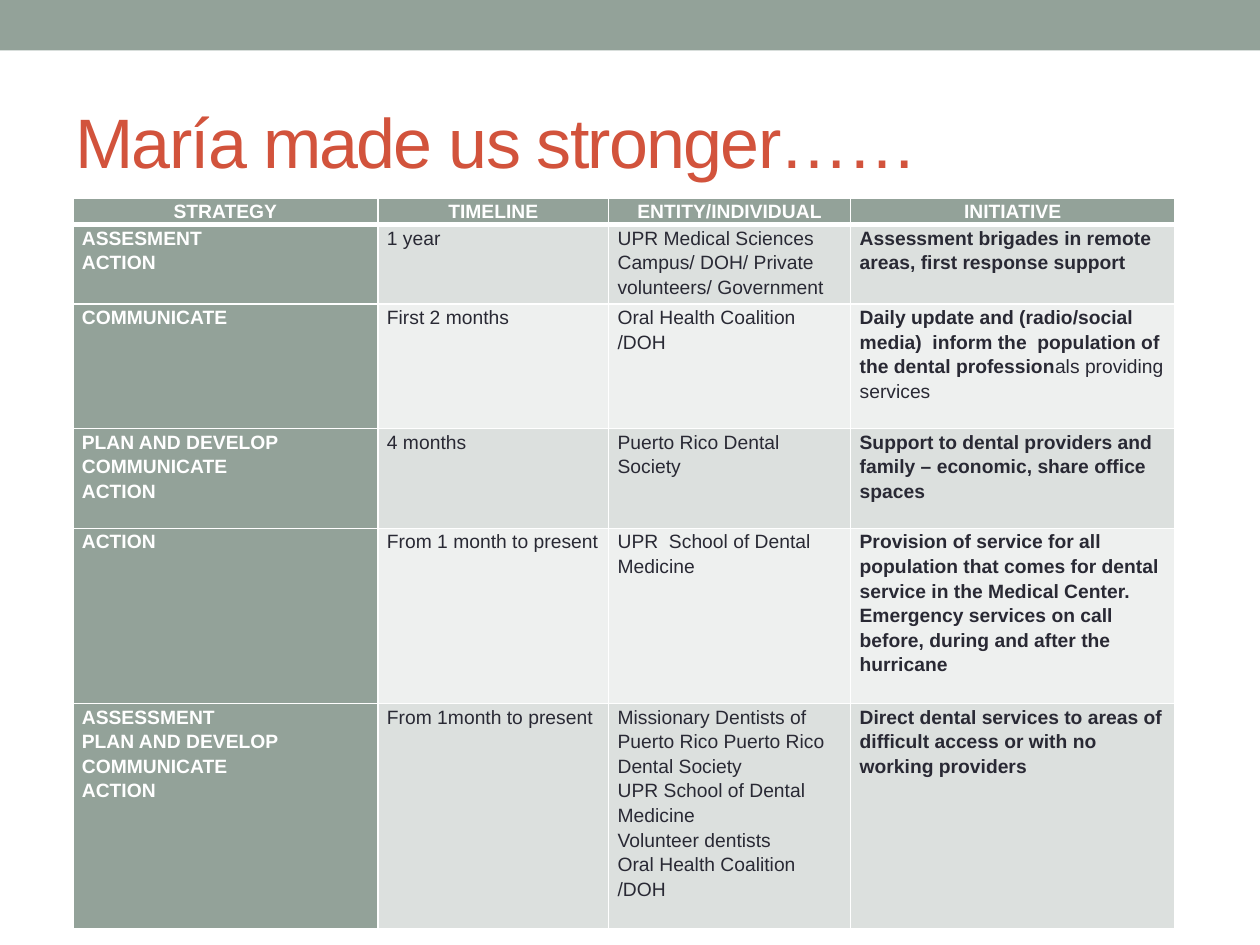
import pptx
import pptx.dml.color
import pptx.enum.shapes
import pptx.enum.text
import pptx.oxml
import pptx.oxml.ns
import pptx.util

Cm = pptx.util.Cm
Pt = pptx.util.Pt
RGBColor = pptx.dml.color.RGBColor
Align = pptx.enum.text.PP_ALIGN

SAGE = RGBColor(0x93, 0xA2, 0x99)
RUST = RGBColor(0xD2, 0x53, 0x3C)
INK = RGBColor(0x29, 0x29, 0x34)
WHITE = RGBColor(0xFF, 0xFF, 0xFF)
BAND_DARK = RGBColor(0xDC, 0xE0, 0xDE)
BAND_LIGHT = RGBColor(0xEE, 0xF0, 0xEF)

COLUMN_WIDTHS = [6.15, 4.65, 4.88, 6.53]
ROW_HEIGHTS = [0.51, 1.52, 2.51, 2.01, 3.53, 4.55]

HEADERS = ["STRATEGY", "TIMELINE", "ENTITY/INDIVIDUAL", "INITIATIVE"]
STRATEGIES = [
    (["ASSESMENT", "ACTION"], "1 year",
     ["UPR Medical Sciences Campus/ DOH/ Private volunteers/ Government"],
     "Assessment brigades in remote areas, first response support", ""),
    (["COMMUNICATE"], "First 2 months", ["Oral Health Coalition /DOH"],
     "Daily update and (radio/social media)  inform the  population of the dental profession",
     "als providing services"),
    (["PLAN AND DEVELOP", "COMMUNICATE", "ACTION"], "4 months",
     ["Puerto Rico Dental Society"],
     "Support to dental providers and family – economic, share office spaces", ""),
    (["ACTION"], "From 1 month to present", ["UPR  School of Dental Medicine"],
     "Provision of service for all population that comes for dental service in the "
     "Medical Center.  Emergency services on call before, during and after the hurricane", ""),
    (["ASSESSMENT", "PLAN AND DEVELOP", "COMMUNICATE", "ACTION"], "From 1month to present",
     ["Missionary Dentists of  Puerto Rico Puerto Rico Dental Society",
      "UPR School of Dental Medicine", "Volunteer dentists", "Oral Health Coalition /DOH"],
     "Direct dental services to areas of difficult access or with no working providers", ""),
]


class SlideBuilder:
    font_name = "Arial"
    table_size = 11
    line_spacing = 1.15

    def __init__(self, slide):
        self.slide = slide

    def add_run(self, paragraph, text, size, color, bold=False):
        run = paragraph.add_run()
        run.text = text
        run.font.name = self.font_name
        run.font.size = Pt(size)
        run.font.bold = bold
        run.font.color.rgb = color
        return run

    def add_bar(self, left, top, width, height, color):
        shape = self.slide.shapes.add_shape(
            pptx.enum.shapes.MSO_SHAPE.RECTANGLE, Cm(left), Cm(top), Cm(width), Cm(height))
        shape.shadow.inherit = False
        shape.fill.solid()
        shape.fill.fore_color.rgb = color
        shape.line.fill.background()

    def add_title(self, left, top, width, height, text):
        shape = self.slide.shapes.add_textbox(Cm(left), Cm(top), Cm(width), Cm(height))
        frame = shape.text_frame
        frame.word_wrap = True
        frame.vertical_anchor = pptx.enum.text.MSO_ANCHOR.MIDDLE
        run = self.add_run(frame.paragraphs[0], text, 40, RUST)
        run.font._element.set("spc", "-100")

    def add_table(self, left, top, widths, heights):
        frame = self.slide.shapes.add_table(
            len(heights), len(widths), Cm(left), Cm(top), Cm(sum(widths)), Cm(sum(heights)))
        table = frame.table
        for column, width in zip(table.columns, widths):
            column.width = Cm(width)
        for row, height in zip(table.rows, heights):
            row.height = Cm(height)
        return table

    def set_borders(self, cell, top, bottom):
        properties = cell._tc.get_or_add_tcPr()
        sides = [("lnL", 1), ("lnR", 1), ("lnT", top), ("lnB", bottom)]
        for index, (side, width) in enumerate(sides):
            border = pptx.oxml.parse_xml(
                f'<a:{side} {pptx.oxml.ns.nsdecls("a")} w="{Pt(width)}">'
                f'<a:solidFill><a:srgbClr val="{WHITE}"/></a:solidFill></a:{side}>')
            properties.insert(index, border)

    def fill_cell(self, cell, paragraphs, fill, color, align=Align.LEFT, top=1, bottom=1):
        cell.margin_left = cell.margin_right = Cm(0.18)
        cell.margin_top = cell.margin_bottom = 0
        cell.fill.solid()
        cell.fill.fore_color.rgb = fill
        self.set_borders(cell, top, bottom)
        for index, runs in enumerate(paragraphs):
            frame = cell.text_frame
            paragraph = frame.add_paragraph() if index else frame.paragraphs[0]
            paragraph.alignment = align
            paragraph.line_spacing = self.line_spacing
            for text, bold in runs:
                self.add_run(paragraph, text, self.table_size, color, bold)


def main():
    presentation = pptx.Presentation()
    presentation.slide_width = Cm(25.4)
    presentation.slide_height = Cm(19.05)
    builder = SlideBuilder(presentation.slides.add_slide(presentation.slide_layouts[6]))

    builder.add_bar(0, 0, 25.4, 1.02, SAGE)
    builder.add_title(1.27, 1.47, 22.86, 2.74, "María made us stronger……")
    table = builder.add_table(1.47, 3.99, COLUMN_WIDTHS, ROW_HEIGHTS)

    for column, header in enumerate(HEADERS):
        builder.fill_cell(table.cell(0, column), [[(header, True)]], SAGE, WHITE,
                          Align.CENTER, bottom=3)

    for row, (strategy, timeline, entities, initiative, ending) in enumerate(STRATEGIES, 1):
        band = BAND_DARK if row % 2 else BAND_LIGHT
        top = 3 if row == 1 else 1
        initiative_runs = [(text, bold) for text, bold in ((initiative, True), (ending, False))
                           if text]
        contents = [
            [[(line, True)] for line in strategy],
            [[(timeline, False)]],
            [[(line, False)] for line in entities],
            [initiative_runs],
        ]
        for column, paragraphs in enumerate(contents):
            fill, color = (band, INK) if column else (SAGE, WHITE)
            builder.fill_cell(table.cell(row, column), paragraphs, fill, color, top=top)

    presentation.save("out.pptx")


if __name__ == "__main__":
    main()
